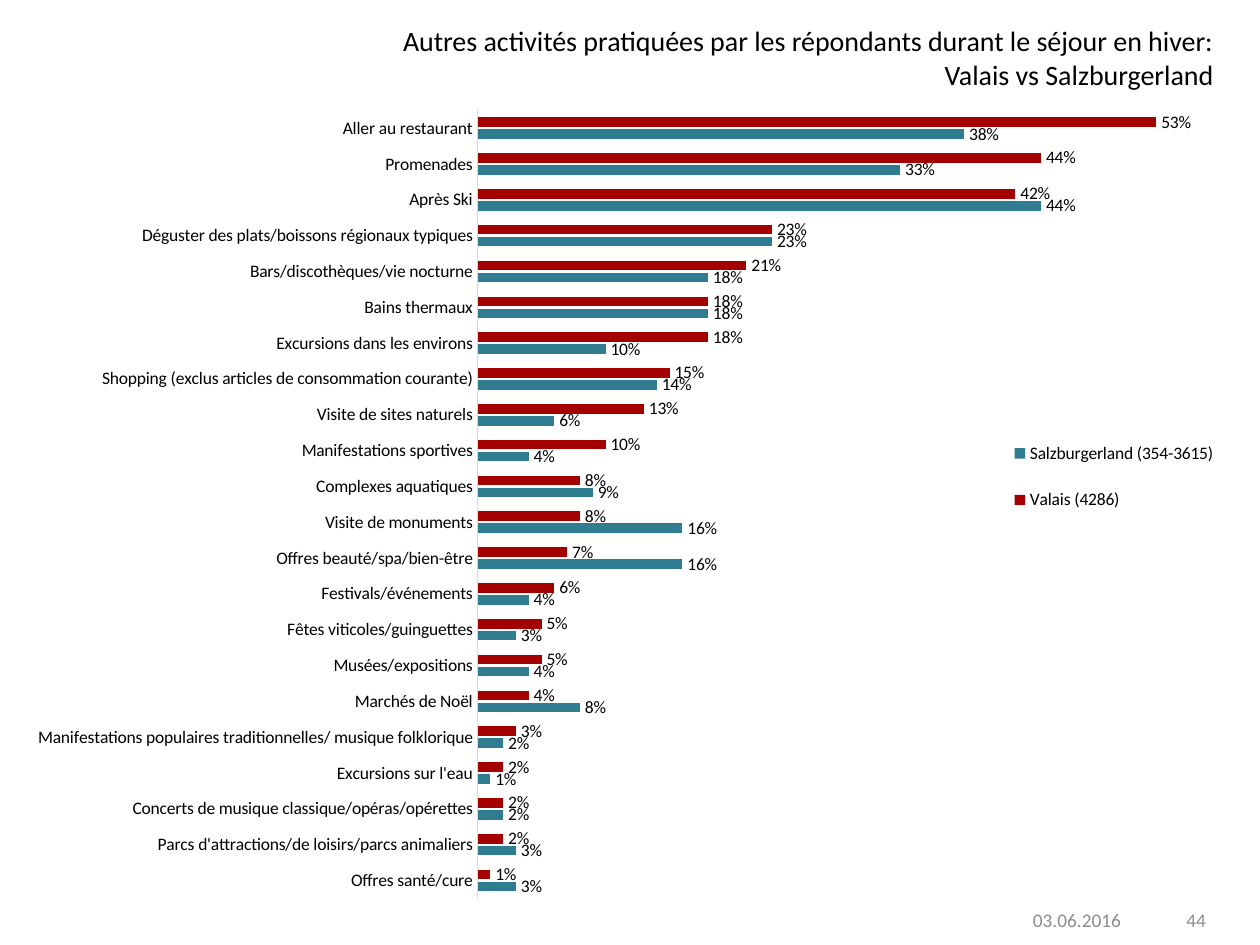
from lxml import etree
from pptx import Presentation
from pptx.chart.data import CategoryChartData
from pptx.dml.color import RGBColor
from pptx.enum.chart import XL_CHART_TYPE, XL_LABEL_POSITION, XL_LEGEND_POSITION, XL_TICK_MARK
from pptx.enum.text import MSO_ANCHOR, PP_ALIGN
from pptx.oxml.ns import qn
from pptx.util import Inches, Pt

SERIES = [("Valais (4286)", "A40000"), ("Salzburgerland (354-3615)", "307C90")]
ACTIVITIES = [
    ("Aller au restaurant", 53, 38),
    ("Promenades", 44, 33),
    ("Après Ski", 42, 44),
    ("Déguster des plats/boissons régionaux typiques", 23, 23),
    ("Bars/discothèques/vie nocturne", 21, 18),
    ("Bains thermaux", 18, 18),
    ("Excursions dans les environs", 18, 10),
    ("Shopping (exclus articles de consommation courante)", 15, 14),
    ("Visite de sites naturels", 13, 6),
    ("Manifestations sportives", 10, 4),
    ("Complexes aquatiques", 8, 9),
    ("Visite de monuments", 8, 16),
    ("Offres beauté/spa/bien-être", 7, 16),
    ("Festivals/événements", 6, 4),
    ("Fêtes viticoles/guinguettes", 5, 3),
    ("Musées/expositions", 5, 4),
    ("Marchés de Noël", 4, 8),
    ("Manifestations populaires traditionnelles/ musique folklorique", 3, 2),
    ("Excursions sur l'eau", 2, 1),
    ("Concerts de musique classique/opéras/opérettes", 2, 2),
    ("Parcs d'attractions/de loisirs/parcs animaliers", 2, 3),
    ("Offres santé/cure", 1, 3),
]


def color(value):
    return RGBColor.from_string(value)


def set_layout(parent, index, x, y, w, h, inner=False):
    for old in parent.findall(qn("c:layout")):
        parent.remove(old)
    layout = etree.Element(qn("c:layout"))
    manual = etree.SubElement(layout, qn("c:manualLayout"))
    settings = [("layoutTarget", "inner")] if inner else []
    settings += [("xMode", "edge"), ("yMode", "edge")]
    settings += [("x", x), ("y", y), ("w", w), ("h", h)]
    for tag, value in settings:
        etree.SubElement(manual, qn(f"c:{tag}")).set("val", str(value))
    parent.insert(index, layout)


class Deck:
    font = "Calibri"
    black = "000000"
    gray = "8C8C8C"
    axis_line = "D9D9D9"

    def __init__(self):
        self.prs = Presentation()
        self.prs.slide_width, self.prs.slide_height = Inches(10), Inches(7.5)
        self.s = self.prs.slides.add_slide(self.prs.slide_layouts[6])

    def style(self, font, size, value):
        font.name, font.size = self.font, Pt(size)
        font.color.rgb = color(value)

    def text(self, box, lines, size, value, align=PP_ALIGN.LEFT, anchor=MSO_ANCHOR.TOP):
        tf = self.s.shapes.add_textbox(*map(Inches, box)).text_frame
        tf.word_wrap = True
        tf.vertical_anchor = anchor
        tf.text = "\n".join(lines)
        for p in tf.paragraphs:
            p.alignment = align
            self.style(p.font, size, value)

    def bar_chart(self, box, series, rows):
        data = CategoryChartData(number_format="0%")
        data.categories = [row[0] for row in rows]
        for i, (name, _) in enumerate(series, 1):
            data.add_series(name, [row[i] / 100 for row in rows])
        chart = self.s.shapes.add_chart(
            XL_CHART_TYPE.BAR_CLUSTERED, *map(Inches, box), data
        ).chart
        chart.has_title = False
        self.style(chart.font, 10, self.black)

        plot = chart.plots[0]
        plot.gap_width, plot.overlap = 150, -25
        plot.vary_by_categories = False
        for ser, (_, fill) in zip(plot.series, series):
            ser.invert_if_negative = False
            ser.format.fill.solid()
            ser.format.fill.fore_color.rgb = color(fill)
            labels = ser.data_labels
            labels.show_value = True
            labels.number_format, labels.number_format_is_linked = "0%", False
            labels.position = XL_LABEL_POSITION.OUTSIDE_END
            self.style(labels.font, 10, self.black)

        cat = chart.category_axis
        cat.reverse_order = True
        cat.has_major_gridlines = False
        cat.major_tick_mark = cat.minor_tick_mark = XL_TICK_MARK.NONE
        cat.format.line.color.rgb = color(self.axis_line)
        cat.format.line.width = Pt(0.75)
        self.style(cat.tick_labels.font, 10, self.black)

        val = chart.value_axis
        val.minimum_scale, val.maximum_scale = 0, 0.6
        val.has_major_gridlines = False
        val.visible = False

        chart.has_legend = True
        legend = chart.legend
        legend.position = XL_LEGEND_POSITION.BOTTOM
        legend.include_in_layout = False
        self.style(legend.font, 10, self.black)
        set_layout(legend._element, 1, 0.81, 0.43, 0.17, 0.13)
        plot_area = chart._chartSpace.find(".//" + qn("c:plotArea"))
        set_layout(plot_area, 0, 0.39, 0.1, 0.61, 0.85, inner=True)


def main():
    deck = Deck()
    deck.text((8.1, 7.1, 1, 0.4), ["03.06.2016"], 11, deck.gray, anchor=MSO_ANCHOR.MIDDLE)
    deck.text((7.34, 7.1, 2.33, 0.4), ["44"], 11, deck.gray, PP_ALIGN.RIGHT, MSO_ANCHOR.MIDDLE)
    title = [
        "Autres activités pratiquées par les répondants durant le séjour en hiver:",
        "Valais vs Salzburgerland",
    ]
    deck.text((3, 0.14, 6.73, 0.64), title, 16, deck.black, PP_ALIGN.RIGHT)
    deck.bar_chart((-0.11, 0.14, 10, 7.36), SERIES, ACTIVITIES)
    deck.prs.save("out.pptx")


if __name__ == "__main__":
    main()
